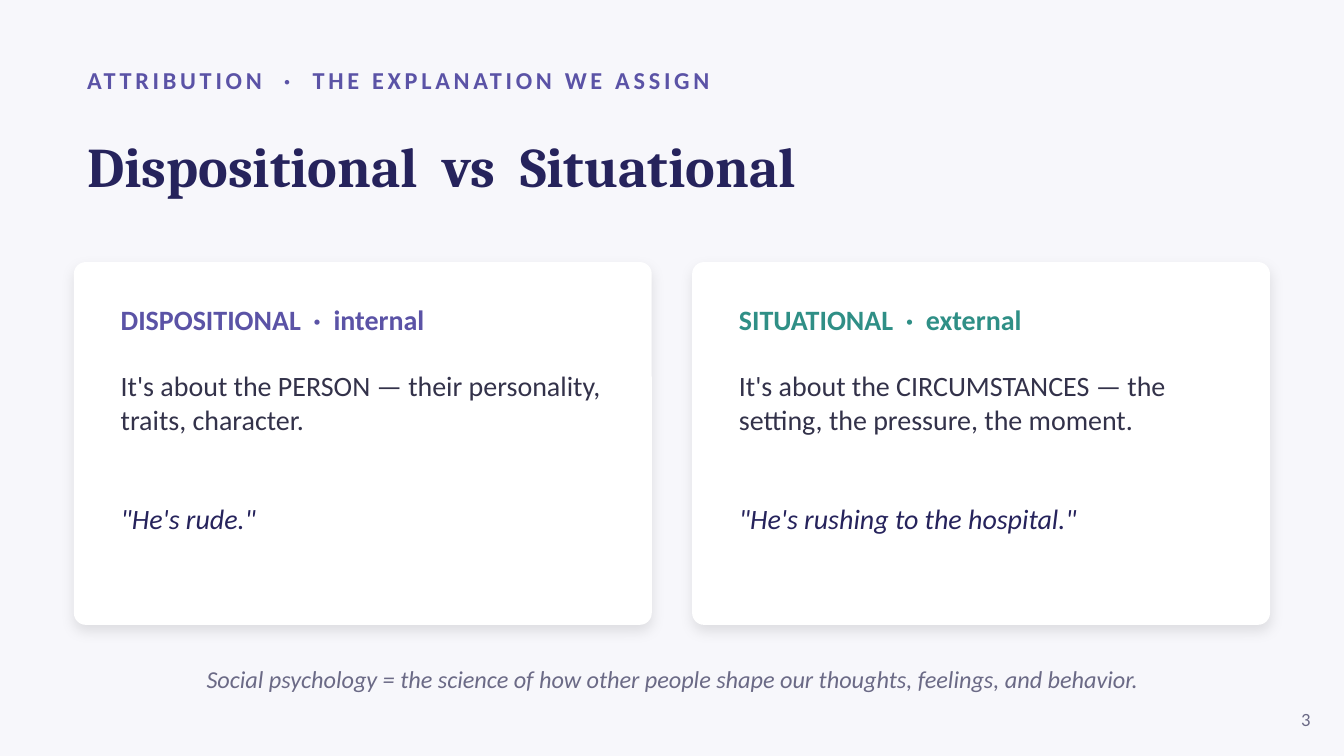
import pptx
import pptx.dml.color
import pptx.enum.shapes
import pptx.enum.text
import pptx.oxml
import pptx.oxml.ns
import pptx.util

RGBColor = pptx.dml.color.RGBColor
Inches = pptx.util.Inches
Pt = pptx.util.Pt
Align = pptx.enum.text.PP_ALIGN
Anchor = pptx.enum.text.MSO_ANCHOR

BACKGROUND = RGBColor(0xF7, 0xF7, 0xFB)
WHITE = RGBColor(0xFF, 0xFF, 0xFF)
PURPLE = RGBColor(0x5B, 0x53, 0xA6)
TEAL = RGBColor(0x2F, 0x8F, 0x86)
NAVY = RGBColor(0x26, 0x23, 0x5C)
INK = RGBColor(0x33, 0x32, 0x4A)
GREY = RGBColor(0x6B, 0x6A, 0x86)

WIDTH, HEIGHT = 10, 10 * 9 / 16
MARGIN = 0.55
CONTENT = WIDTH - 2 * MARGIN
GAP = 0.3

CARDS = [
    ("DISPOSITIONAL  ·  internal", PURPLE,
     "It's about the PERSON — their personality, traits, character.",
     "\"He's rude.\""),
    ("SITUATIONAL  ·  external", TEAL,
     "It's about the CIRCUMSTANCES — the setting, the pressure, the moment.",
     "\"He's rushing to the hospital.\""),
]

SHADOW = (
    '<a:effectLst %s><a:outerShdw blurRad="%d" dist="%d" dir="5400000" '
    'algn="bl" rotWithShape="0"><a:srgbClr val="000000">'
    '<a:alpha val="10000"/></a:srgbClr></a:outerShdw></a:effectLst>'
    % (pptx.oxml.ns.nsdecls("a"), Pt(7), Pt(3))
)


def add_text_frame(page, box, anchor=Anchor.MIDDLE):
    frame = page.shapes.add_textbox(*map(Inches, box)).text_frame
    frame.word_wrap = True
    frame.vertical_anchor = anchor
    return frame


def style(para, text, size, color, name="Calibri", bold=False, italic=False,
          align=Align.LEFT):
    para.text = text
    para.alignment = align
    font = para.font
    font.name, font.size = name, Pt(size)
    font.bold, font.italic = bold, italic
    font.color.rgb = color


def add_header(page, box):
    left, top, width, height = box
    # Letter-spaced line above the title
    kicker = add_text_frame(page, (left, top, width, 0.35)).paragraphs[0]
    style(kicker, "ATTRIBUTION  ·  THE EXPLANATION WE ASSIGN", 13, PURPLE,
          bold=True)
    for span in kicker.runs:
        span.font.bold = True
        span._r.get_or_add_rPr().set("spc", "200")
    # Title
    title = add_text_frame(page, (left, top + 0.36, width, height - 0.36))
    style(title.paragraphs[0], "Dispositional  vs  Situational", 30, NAVY,
          name="Cambria", bold=True)


def add_card(page, box, heading, accent, meaning, quote):
    left, top, width, height = box
    # Rounded panel with a soft shadow
    panel = page.shapes.add_shape(
        pptx.enum.shapes.MSO_SHAPE.ROUNDED_RECTANGLE, *map(Inches, box))
    panel.adjustments[0] = 0.033
    panel.fill.solid()
    panel.fill.fore_color.rgb = WHITE
    panel.line.fill.background()
    panel._element.spPr.append(pptx.oxml.parse_xml(SHADOW))
    # Heading, meaning and example
    pad = 0.25
    frame = add_text_frame(
        page, (left + pad, top + pad, width - 2 * pad, height - 0.4),
        Anchor.TOP)
    style(frame.paragraphs[0], heading, 15, accent, bold=True)
    body = frame.add_paragraph()
    style(body, meaning, 15, INK)
    body.space_before = Pt(17.5)
    example = frame.add_paragraph()
    style(example, quote, 15, NAVY, italic=True)
    example.space_before = Pt(35)


def add_cards(page, box):
    left, top, width, height = box
    card_width = (width - GAP * (len(CARDS) - 1)) / len(CARDS)
    for column, card in enumerate(CARDS):
        card_left = left + column * (card_width + GAP)
        add_card(page, (card_left, top, card_width, height), *card)


def add_footer(page, box):
    left, top, width, height = box
    # Definition
    definition = add_text_frame(page, (left, top, width, 0.4))
    style(definition.paragraphs[0],
          "Social psychology = the science of how other people shape our "
          "thoughts, feelings, and behavior.",
          13, GREY, italic=True, align=Align.CENTER)
    # Page number
    number = add_text_frame(
        page, (left + width - 0.1, top + height - 0.3, 0.5, 0.3))
    style(number.paragraphs[0], "3", 10, GREY, align=Align.RIGHT)


def main():
    deck = pptx.Presentation()
    deck.slide_width, deck.slide_height = Inches(WIDTH), Inches(HEIGHT)
    page = deck.slides.add_slide(deck.slide_layouts[6])
    page.background.fill.solid()
    page.background.fill.fore_color.rgb = BACKGROUND
    add_header(page, (MARGIN, 0.42, CONTENT, 1.26))
    add_cards(page, (MARGIN, 1.95, CONTENT, 2.7))
    add_footer(page, (MARGIN, 4.85, CONTENT, 0.65))
    deck.save("out.pptx")


if __name__ == "__main__":
    main()
